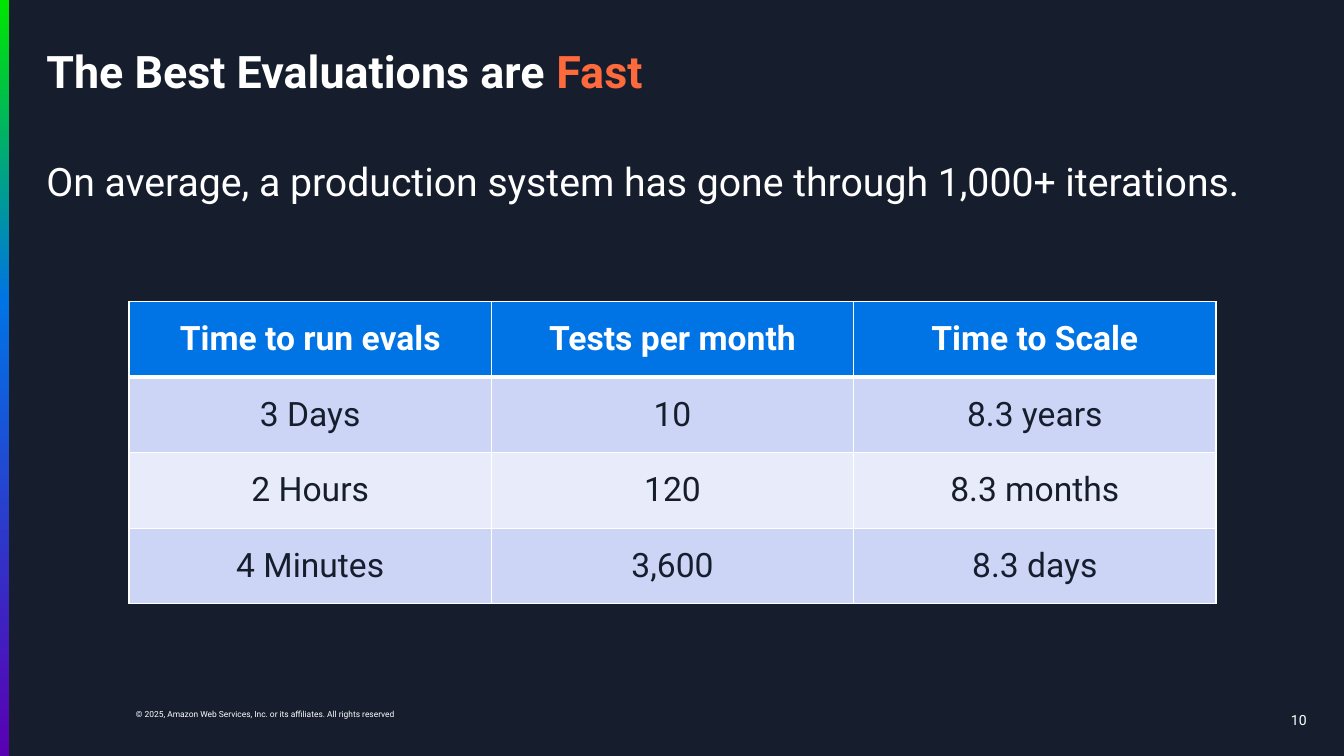
import copy

import pptx
import pptx.dml.color
import pptx.enum.shapes
import pptx.enum.text
import pptx.oxml
import pptx.oxml.ns
import pptx.util

Inches, Pt = pptx.util.Inches, pptx.util.Pt
ALIGN = pptx.enum.text.PP_ALIGN
ANCHOR = pptx.enum.text.MSO_ANCHOR
AUTO = pptx.enum.text.MSO_AUTO_SIZE

COLORS = {
    "night": "161E2D", "white": "FFFFFF", "orange": "FF6A3D", "green": "00E500",
    "blue": "0073E5", "purple": "5900B2", "band": "CCD5F5", "band_light": "E7EBFA",
}
FONT = "Roboto"
ROWS = [
    ("Time to run evals", "Tests per month", "Time to Scale"),
    ("3 Days", "10", "8.3 years"),
    ("2 Hours", "120", "8.3 months"),
    ("4 Minutes", "3,600", "8.3 days"),
]


def rgb(name):
    return pptx.dml.color.RGBColor.from_string(COLORS[name])


def add_run(p, text, size, color="white", bold=False):
    r = p.add_run()
    r.text = text
    r.font.name, r.font.size, r.font.bold = FONT, Pt(size), bold
    r.font.color.rgb = rgb(color)


def place(sp, box):
    sp.left, sp.top, sp.width, sp.height = (Inches(v) for v in box)


def set_frame(tf, insets, anchor=ANCHOR.TOP, wrap=True, auto=AUTO.NONE):
    tf.margin_left, tf.margin_top, tf.margin_right, tf.margin_bottom = (
        Inches(v) for v in insets)
    tf.vertical_anchor, tf.word_wrap, tf.auto_size = anchor, wrap, auto


def add_gradient_edge(slide, box):
    sp = slide.shapes.add_shape(
        pptx.enum.shapes.MSO_SHAPE.RECTANGLE, *(Inches(v) for v in box))
    sp.shadow.inherit = False
    sp.line.fill.background()
    sp.fill.gradient()
    sp.fill.gradient_angle = 270
    stops = sp._element.spPr.find(".//" + pptx.oxml.ns.qn("a:gsLst"))
    stops.append(copy.deepcopy(stops[-1]))
    for stop, (position, color) in zip(
            sp.fill.gradient_stops, [(0, "green"), (0.4, "blue"), (1, "purple")]):
        stop.position = position
        stop.color.rgb = rgb(color)


def add_footer(slide, box):
    """Copyright line at the left of the box, page number at its right."""
    left, top, width, height = box
    sp = slide.shapes.add_textbox(
        Inches(left), Inches(top + 0.05), Inches(2.85), Inches(0.2))
    set_frame(sp.text_frame, (0.1, 0.05, 0.1, 0.05), wrap=False,
              auto=AUTO.SHAPE_TO_FIT_TEXT)
    add_run(sp.text_frame.paragraphs[0],
            "© 2025, Amazon Web Services, Inc. or its affiliates. All rights reserved", 6)

    sp = slide.shapes.add_textbox(
        Inches(left + width - 3), Inches(top), Inches(3), Inches(height))
    set_frame(sp.text_frame, (0, 0, 0, 0), ANCHOR.MIDDLE)
    p = sp.text_frame.paragraphs[0]
    p.alignment = ALIGN.RIGHT
    add_run(p, "10", 10)


def fill_title(sp, box):
    place(sp, box)
    set_frame(sp.text_frame, (0, 0.1, 0, 0.05))
    p = sp.text_frame.paragraphs[0]
    p.alignment, p.line_spacing = ALIGN.LEFT, 0.9
    add_run(p, "The Best Evaluations are ", 32, bold=True)
    add_run(p, "Fast", 32, "orange", bold=True)


def fill_body(sp, box):
    place(sp, box)
    set_frame(sp.text_frame, (0, 0.05, 0, 0.05), auto=AUTO.SHAPE_TO_FIT_TEXT)
    p = sp.text_frame.paragraphs[0]
    pPr = p._p.get_or_add_pPr()
    pPr.set("marL", "0")
    pPr.set("indent", "0")
    pPr.append(pptx.oxml.parse_xml(
        f'<a:buNone {pptx.oxml.ns.nsdecls("a")}/>'))
    p.space_before, p.space_after = Pt(0), Pt(12)
    add_run(p, "On average, a production system has gone through 1,000+ iterations.", 28)


def add_border(cell, side, width):
    cell._tc.get_or_add_tcPr().append(pptx.oxml.parse_xml(
        f'<a:ln{side} {pptx.oxml.ns.nsdecls("a")} w="{Pt(width)}"><a:solidFill>'
        f'<a:srgbClr val="{COLORS["white"]}"/></a:solidFill></a:ln{side}>'))


def add_eval_table(slide, box):
    left, top, width, height = (Inches(v) for v in box)
    table = slide.shapes.add_table(
        len(ROWS), len(ROWS[0]), left, top, width, height).table
    for i, texts in enumerate(ROWS):
        header = i == 0
        fill = "blue" if header else "band" if i % 2 else "band_light"
        for j, text in enumerate(texts):
            cell = table.cell(i, j)
            for side in "LRTB":
                thick = (side, i) in (("B", 0), ("T", 1))
                add_border(cell, side, 3 if thick else 1)
            cell.fill.solid()
            cell.fill.fore_color.rgb = rgb(fill)
            cell.vertical_anchor = ANCHOR.MIDDLE
            p = cell.text_frame.paragraphs[0]
            p.alignment = ALIGN.CENTER
            add_run(p, text, 24, "white" if header else "night", bold=header)


def build_slide(prs):
    slide = prs.slides.add_slide(prs.slide_layouts[1])
    slide.background.fill.solid()
    slide.background.fill.fore_color.rgb = rgb("night")
    add_gradient_edge(slide, (0, 0, 0.09, 7.5))
    add_footer(slide, (1.25, 6.94, 11.71, 0.4))
    fill_title(slide.shapes.title, (0.46, 0.39, 12.5, 0.7))
    fill_body(slide.placeholders[1], (0.46, 1.51, 12.5, 0.57))
    add_eval_table(slide, (1.28, 2.99, 10.78, 3))


def main():
    prs = pptx.Presentation()
    prs.slide_width, prs.slide_height = Inches(13.33), Inches(7.5)
    build_slide(prs)
    prs.save("out.pptx")


if __name__ == "__main__":
    main()
